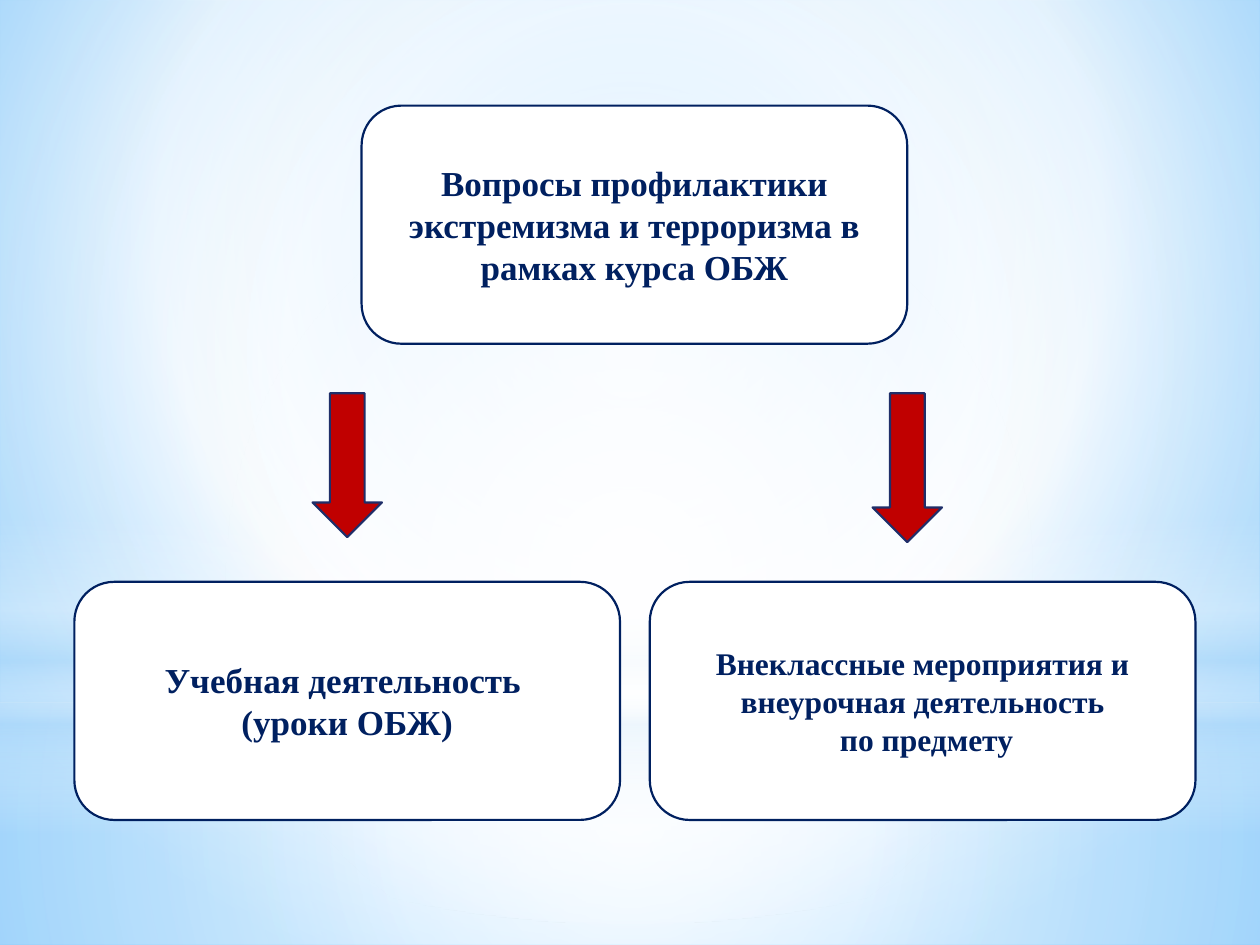
from lxml import etree
from pptx import Presentation
from pptx.dml.color import RGBColor
from pptx.enum.shapes import MSO_SHAPE
from pptx.enum.text import MSO_ANCHOR, PP_ALIGN
from pptx.oxml.ns import qn
from pptx.util import Cm, Pt

RECTANGLE, OVAL = MSO_SHAPE.RECTANGLE, MSO_SHAPE.OVAL
ROUNDED, ARROW = MSO_SHAPE.ROUNDED_RECTANGLE, MSO_SHAPE.RIGHT_ARROW
CENTER, MIDDLE = PP_ALIGN.CENTER, MSO_ANCHOR.MIDDLE
COLORS = {
    "white": "FFFFFF", "navy": "002060", "red": "C00000", "arrow_line": "1F2E69",
    "sky": "9ED5FF", "deep_sky": "5BB9FF", "haze": "B4DCFA",
}
FONT = "Times New Roman"
SLIDE_WIDTH, SLIDE_HEIGHT = 25.4, 19.05
BOX_WIDTH, BOX_HEIGHT = 11, 4.8
ARROW_THICKNESS = 1.4
MIDPOINT = (50, 50, 50, 50)


def color(name):
    """Return the named palette colour."""
    return RGBColor.from_string(COLORS[name])


def apply_gradient(element, stops, focus=None):
    """Replace the solid fill of an element with a circular or downward gradient."""
    solid = element.xpath(".//a:solidFill")[0]
    gradient = etree.Element(qn("a:gradFill"), rotWithShape="1")
    stop_list = etree.SubElement(gradient, qn("a:gsLst"))
    for position, name, opacity in stops:
        stop = etree.SubElement(stop_list, qn("a:gs"), pos=str(position * 1000))
        stop_color = etree.SubElement(stop, qn("a:srgbClr"), val=COLORS[name])
        if opacity < 100:
            etree.SubElement(stop_color, qn("a:alpha"), val=str(opacity * 1000))
    if focus:
        circle = etree.SubElement(gradient, qn("a:path"))
        circle.set("path", "circle")
        sides = {side: str(value * 1000) for side, value in zip("ltrb", focus)}
        etree.SubElement(circle, qn("a:fillToRect"), **sides)
    else:
        etree.SubElement(gradient, qn("a:lin"), ang="5400000", scaled="0")
    solid.getparent().replace(solid, gradient)


def add_filled_shape(slide, kind, box, fill, line=None):
    """Add a flat preset shape in a box of centimetres."""
    shape = slide.shapes.add_shape(kind, *(Cm(length) for length in box))
    shape.shadow.inherit = False
    shape.fill.solid()
    shape.fill.fore_color.rgb = color(fill)
    if line:
        shape.line.color.rgb = color(line)
        shape.line.width = Pt(1.25)
    else:
        shape.line.fill.background()
    return shape


def add_backdrop(slide, width, height):
    """Paint the sky background and its layers of light."""
    slide.background.fill.solid()
    sky = [(0, "sky", 100), (60, "white", 100), (100, "deep_sky", 100)]
    apply_gradient(slide._element, sky, (20, 10, 20, 60))
    horizon = 14.17
    layers = [
        (RECTANGLE, horizon, height - horizon,
         [(0, "white", 91), (37, "white", 76), (100, "haze", 79)], MIDPOINT),
        (RECTANGLE, 0, horizon,
         [(0, "white", 89), (48, "white", 62), (100, "haze", 79)], MIDPOINT),
        (RECTANGLE, 10.46, 6.35,
         [(0, "white", 0), (29, "white", 30), (45, "haze", 40),
          (55, "white", 26), (65, "haze", 60), (100, "white", 0)], None),
        (OVAL, 4.45, horizon, [(0, "white", 100), (56, "white", 0)], MIDPOINT),
    ]
    for kind, top, layer_height, stops, focus in layers:
        layer = add_filled_shape(slide, kind, (0, top, width, layer_height), "white")
        apply_gradient(layer._element, stops, focus)


def add_topic_box(slide, left, top, size, paragraphs):
    """Add a rounded box with centred bold paragraphs, each a list of runs."""
    box = (left, top, BOX_WIDTH, BOX_HEIGHT)
    shape = add_filled_shape(slide, ROUNDED, box, "white", "navy")
    frame = shape.text_frame
    frame.word_wrap = True
    frame.vertical_anchor = MIDDLE
    for index, runs in enumerate(paragraphs):
        paragraph = frame.add_paragraph() if index else frame.paragraphs[0]
        paragraph.alignment = CENTER
        for text in runs:
            run = paragraph.add_run()
            run.text = text
            run.font.name = FONT
            run.font.size = Pt(size)
            run.font.bold = True
            run.font.color.rgb = color("navy")


def add_down_arrow(slide, center, top, length):
    """Add a red arrow pointing down from the given top."""
    box = (center - length / 2, top + (length - ARROW_THICKNESS) / 2,
           length, ARROW_THICKNESS)
    arrow = add_filled_shape(slide, ARROW, box, "red", "arrow_line")
    arrow.rotation = 90


def add_topic_tree(slide, left, top):
    """Add the main topic, its two branches and the arrows between them."""
    branch_top = top + 9.6
    add_topic_box(slide, left + 5.79, top, 20,
                  [["Вопросы профилактики экстремизма и терроризма в рамках курса ОБЖ"]])
    add_topic_box(slide, left, branch_top, 20,
                  [["Учебная деятельность "], ["(уроки ОБЖ)"]])
    add_topic_box(slide, left + 11.6, branch_top, 18,
                  [["Внеклассные мероприятия и внеурочная деятельность"],
                   [" по предмету"]])
    for offset, length in ((5.5, 2.9), (16.79, 3)):
        add_down_arrow(slide, left + offset, top + 5.8, length)


def main():
    """Build and save the presentation."""
    presentation = Presentation()
    presentation.slide_width = Cm(SLIDE_WIDTH)
    presentation.slide_height = Cm(SLIDE_HEIGHT)
    slide = presentation.slides.add_slide(presentation.slide_layouts[6])
    add_backdrop(slide, SLIDE_WIDTH, SLIDE_HEIGHT)
    add_topic_tree(slide, 1.5, 2.13)
    presentation.save("out.pptx")


if __name__ == "__main__":
    main()
